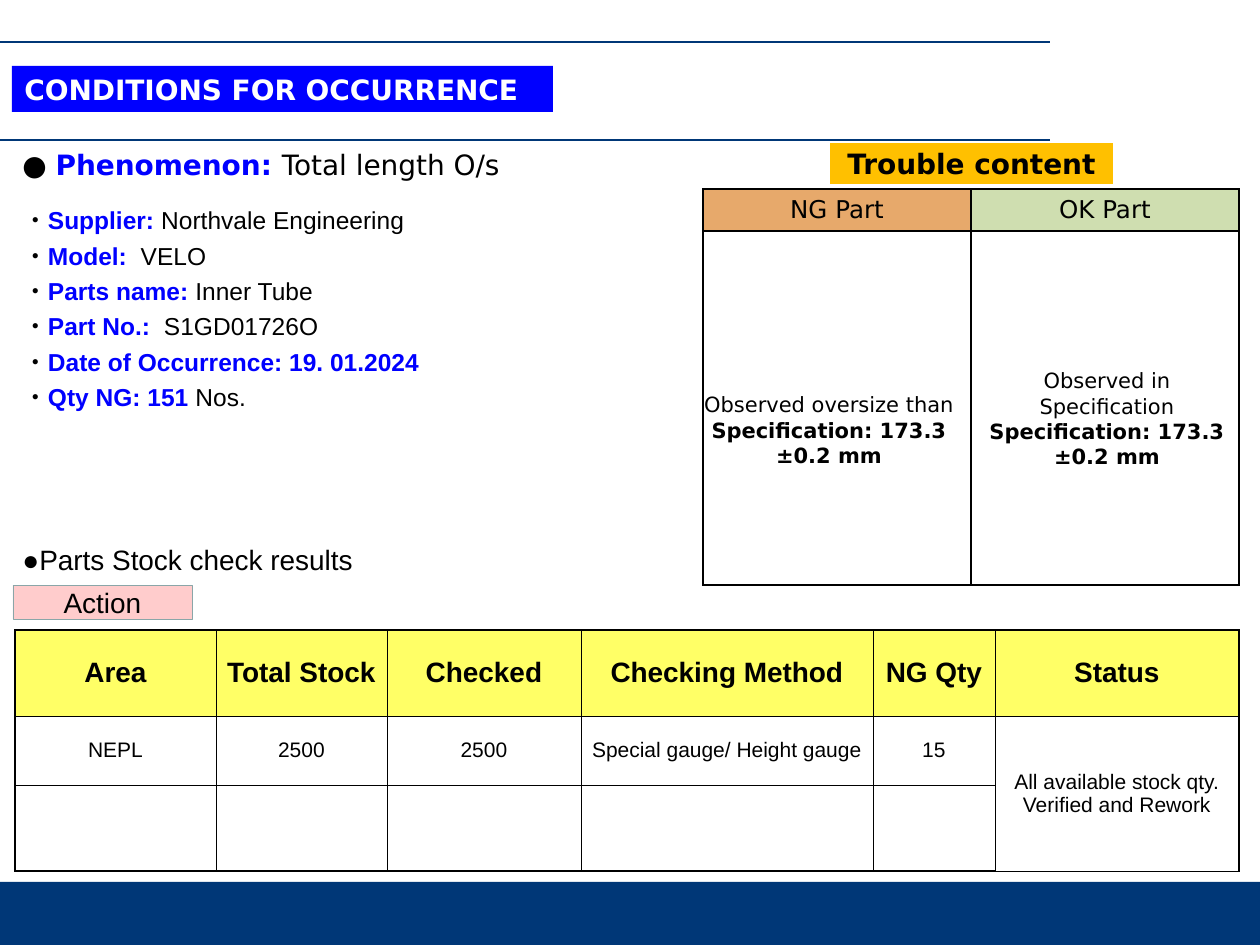
from lxml import etree
from pptx import Presentation
from pptx.dml.color import RGBColor
from pptx.enum.shapes import MSO_CONNECTOR, MSO_SHAPE
from pptx.enum.text import MSO_ANCHOR, PP_ALIGN
from pptx.oxml.ns import qn
from pptx.util import Emu, Pt

PX = 914400 / 126
BLACK = RGBColor(0, 0, 0)
WHITE = RGBColor(255, 255, 255)
BLUE = RGBColor(0, 0, 255)
NAVY = RGBColor(0, 55, 119)
AMBER = RGBColor(255, 192, 0)
PINK = RGBColor(255, 204, 204)
GREY = RGBColor(138, 166, 168)
YELLOW = RGBColor(255, 255, 102)
ORANGE = RGBColor(231, 169, 107)
GREEN = RGBColor(207, 222, 176)

TITLE = {"size": Pt(16), "name": "DejaVu Sans"}
HEAD = {"size": Pt(14), "name": "DejaVu Sans"}
NOTE = {"size": Pt(12), "name": "DejaVu Sans"}
LABEL = {"size": Pt(16), "name": "Arial"}
DETAIL = {"size": Pt(14), "name": "Arial"}
VALUE = {"size": Pt(12), "name": "Arial"}
BOLD = {"bold": True}
KEY = {"bold": True, "color": BLUE}


def write(frame, paragraphs, base, align=PP_ALIGN.LEFT, gap=0):
    for index, spans in enumerate(paragraphs):
        para = frame.paragraphs[0] if index == 0 else frame.add_paragraph()
        para.alignment = align
        if index and gap:
            para.space_before = Pt(gap)
        for text, extra in spans:
            span = para.add_run()
            span.text = text
            look = {"bold": False, "color": BLACK, **base, **extra}
            span.font.color.rgb = look.pop("color")
            for name, value in look.items():
                setattr(span.font, name, value)


def add_grid(left, top, widths, heights, inner, margins):
    size = [Emu(round(v * PX)) for v in (left, top, sum(widths), sum(heights))]
    grid = page.shapes.add_table(len(heights), len(widths), *size).table
    grid.first_row = grid.horz_banding = False
    for column, width in zip(grid.columns, widths):
        column.width = Emu(round(width * PX))
    for row, height in zip(grid.rows, heights):
        row.height = Emu(round(height * PX))
    for r in range(len(heights)):
        for c in range(len(widths)):
            cell = grid.cell(r, c)
            cell.vertical_anchor = MSO_ANCHOR.MIDDLE
            cell.margin_left = cell.margin_right = Emu(round(margins[0] * PX))
            cell.margin_top = cell.margin_bottom = Emu(round(margins[1] * PX))
            outer = {"L": c == 0, "R": c == len(widths) - 1,
                     "T": r == 0, "B": r == len(heights) - 1}
            properties = cell._tc.get_or_add_tcPr()
            for side, is_outer in outer.items():
                edge = etree.SubElement(properties, qn(f"a:ln{side}"), w=str(Pt(1 if is_outer else inner)))
                solid = etree.SubElement(edge, qn("a:solidFill"))
                etree.SubElement(solid, qn("a:srgbClr"), val=str(BLACK))
            cell.fill.background()
    return grid


deck = Presentation()
deck.slide_width = Emu(round(1260 * PX))
deck.slide_height = Emu(round(945 * PX))
page = deck.slides.add_slide(deck.slide_layouts[6])

for y in (42, 140):
    rule = page.shapes.add_connector(
        MSO_CONNECTOR.STRAIGHT, 0, Emu(round(y * PX)), Emu(round(1050 * PX)), Emu(round(y * PX)))
    rule.line.color.rgb = NAVY
    rule.line.width = Pt(0.75)
    etree.SubElement(rule._element.spPr, qn("a:effectLst"))

panels = [
    ((0, 882, 1260, 63), NAVY, None, "", {}, PP_ALIGN.LEFT),
    ((12, 66, 541, 46), BLUE, None, "CONDITIONS FOR OCCURRENCE",
     {**TITLE, "bold": True, "color": WHITE}, PP_ALIGN.LEFT),
    ((830, 143, 283, 41), AMBER, None, "Trouble content", {**TITLE, **BOLD}, PP_ALIGN.CENTER),
    ((13, 585, 179, 34), PINK, GREY, "Action", LABEL, PP_ALIGN.CENTER),
]
for place, fill, outline, text, base, align in panels:
    panel = page.shapes.add_shape(MSO_SHAPE.RECTANGLE, *[Emu(round(v * PX)) for v in place])
    panel.shadow.inherit = False
    panel.fill.solid()
    panel.fill.fore_color.rgb = fill
    if outline:
        panel.line.color.rgb = outline
        panel.line.width = Pt(0.25)
    else:
        panel.line.fill.background()
    panel.text_frame.vertical_anchor = MSO_ANCHOR.MIDDLE
    if text:
        write(panel.text_frame, [[(text, {})]], base, align)

details = [
    ("Supplier: ", "Northvale Engineering"),
    ("Model:  ", "VELO"),
    ("Parts name: ", "Inner Tube"),
    ("Part No.:  ", "S1GD01726O"),
    ("Date of Occurrence: 19. 01.2024", ""),
    ("Qty NG: 151 ", "Nos."),
]
detail_lines = [[(text, look) for text, look in (("・", {}), (key, KEY), (value, {})) if text]
                for key, value in details]
phenomenon = [[("● ", {}), ("Phenomenon: ", KEY), ("Total length O/s", {})]]
stock = [[("●Parts Stock check results", {})]]
boxes = [
    ((10, 141, 998, 57), phenomenon, TITLE, MSO_ANCHOR.TOP),
    ((11, 199, 620, 257), detail_lines, DETAIL, MSO_ANCHOR.TOP),
    ((10, 541, 462, 37), stock, LABEL, MSO_ANCHOR.MIDDLE),
]
for place, paragraphs, base, anchor in boxes:
    box = page.shapes.add_textbox(*[Emu(round(v * PX)) for v in place])
    box.text_frame.word_wrap = True
    box.text_frame.vertical_anchor = anchor
    write(box.text_frame, paragraphs, base, gap=3.4)

stock_table = add_grid(15, 630, (201, 171, 194, 292, 122, 244), (86, 69, 86), 0.25, (5, 5))
stock_table.cell(1, 5).merge(stock_table.cell(2, 5))
headings = ("Area", "Total Stock", "Checked", "Checking Method", "NG Qty", "Status")
results = ("NEPL", "2500", "2500", "Special gauge/ Height gauge", "15",
           "All available stock qty. Verified and Rework")
for column, (heading, result) in enumerate(zip(headings, results)):
    cell = stock_table.cell(0, column)
    cell.fill.solid()
    cell.fill.fore_color.rgb = YELLOW
    write(cell.text_frame, [[(heading, BOLD)]], LABEL, PP_ALIGN.CENTER)
    write(stock_table.cell(1, column).text_frame, [[(result, {})]], VALUE, PP_ALIGN.CENTER)

trouble_table = add_grid(703, 189, (268, 268), (42, 354), 1, (13, 6))
for column, (heading, fill) in enumerate((("NG Part", ORANGE), ("OK Part", GREEN))):
    cell = trouble_table.cell(0, column)
    cell.fill.solid()
    cell.fill.fore_color.rgb = fill
    write(cell.text_frame, [[(heading, {})]], HEAD, PP_ALIGN.CENTER)

notes = [
    ((698, 392, 262, 77), "Observed oversize than"),
    ((976, 368, 262, 102), "Observed in Specification"),
]
for place, finding in notes:
    box = page.shapes.add_textbox(*[Emu(round(v * PX)) for v in place])
    frame = box.text_frame
    frame.word_wrap = True
    for side in ("left", "top", "right", "bottom"):
        setattr(frame, f"margin_{side}", 0)
    write(frame, [[(finding, {})], [("Specification: 173.3 ±0.2 mm", BOLD)]], NOTE, PP_ALIGN.CENTER)

deck.save("out.pptx")
